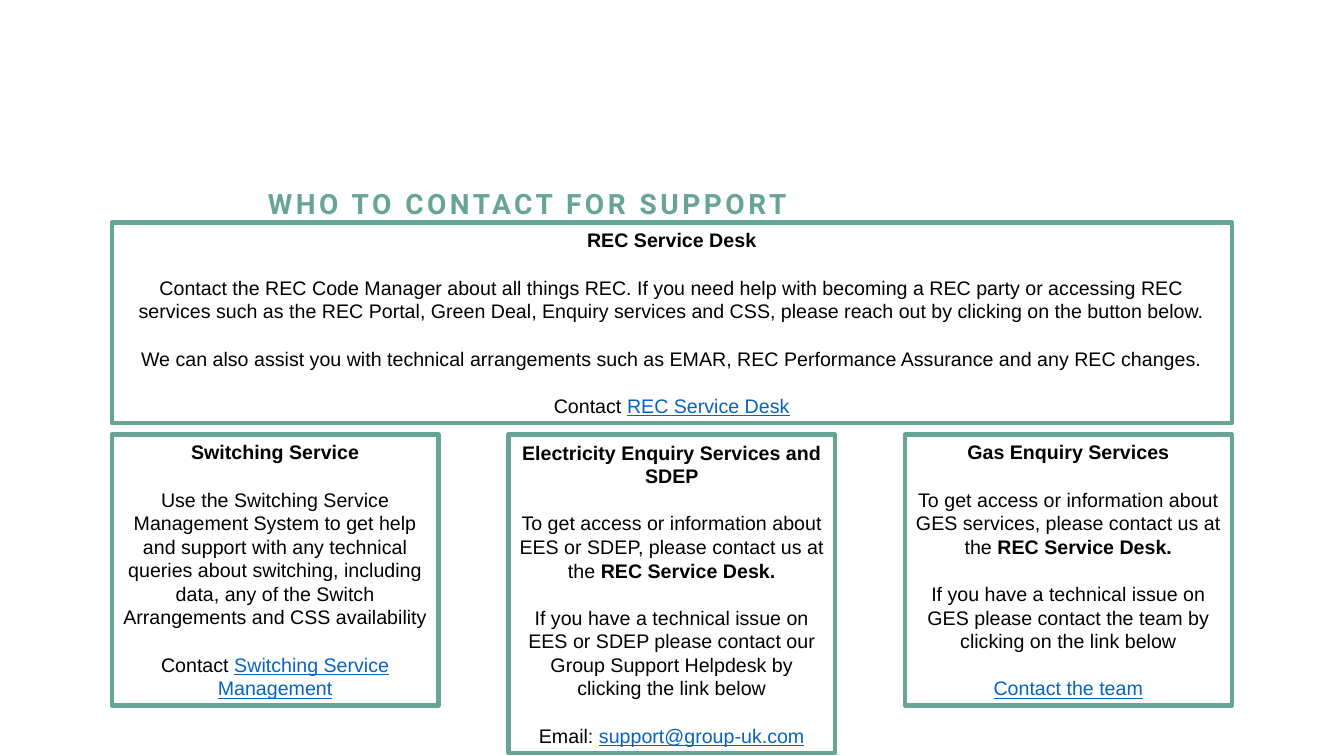
from pptx import Presentation
from pptx.dml.color import RGBColor
from pptx.enum.shapes import MSO_SHAPE
from pptx.enum.text import MSO_ANCHOR, MSO_AUTO_SIZE, PP_ALIGN
from pptx.util import Cm, Pt

GREEN = RGBColor(0x68, 0xA4, 0x95)
BLACK = RGBColor(0x00, 0x00, 0x00)
LINK_BLUE = RGBColor(0x05, 0x63, 0xC1)

PLAIN, BOLD, LINK = "plain", "bold", "link"

LEFT, FULL_WIDTH = 2.82, 28.22
CARD_TOP, CARD_WIDTH = 10.95, 8.23

SERVICE_DESK = [
    [("REC Service Desk", BOLD)],
    [("Contact the REC Code Manager about all things REC. If you need help with "
      "becoming a REC party or accessing REC services such as the REC Portal, Green "
      "Deal, Enquiry services and CSS, please reach out by clicking on the button "
      "below.", PLAIN)],
    [("We can also assist you with technical arrangements such as EMAR, REC "
      "Performance Assurance and any REC changes.", PLAIN)],
    [("Contact ", PLAIN), ("REC Service Desk", LINK)],
]

# Each card: height in cm, paragraphs
CARDS = [
    (6.83, [
        [("Switching Service", BOLD)],
        [("Use the Switching Service Management System to get help and support with "
          "any technical queries about switching, including data, any of the Switch "
          "Arrangements and CSS availability", PLAIN)],
        [("Contact ", PLAIN), ("Switching Service Management", LINK)],
    ]),
    (8.03, [
        [("Electricity Enquiry Services and SDEP", BOLD)],
        [("To get access or information about EES or SDEP, please contact us at the ",
          PLAIN), ("REC Service Desk.", BOLD)],
        [("If you have a technical issue on EES or SDEP please contact our Group "
          "Support Helpdesk by clicking the link below", PLAIN)],
        [("Email: ", PLAIN), ("support@group-uk.com", LINK)],
    ]),
    (6.83, [
        [("Gas Enquiry Services", BOLD)],
        [("To get access or information about GES services, please contact us at the ",
          PLAIN), ("REC Service Desk.", BOLD)],
        [("If you have a technical issue on GES please contact the team by clicking on "
          "the link below", PLAIN)],
        [("Contact the team", LINK)],
    ]),
]


class SupportSlide:
    def __init__(self, presentation):
        self.slide = presentation.slides.add_slide(presentation.slide_layouts[6])
        self.body_font, self.title_font = "Arial", "Roboto"
        self.body_size, self.title_size = Pt(14), Pt(20)
        self.paragraph_gap = Pt(17)

    def title(self, text, left, top, width, height):
        box = self.slide.shapes.add_textbox(Cm(left), Cm(top), Cm(width), Cm(height))
        frame = box.text_frame
        frame.word_wrap = True
        paragraph = frame.paragraphs[0]
        paragraph.line_spacing = 0.9
        run = paragraph.add_run()
        run.text = text
        run.font._element.set("spc", "250")
        font = run.font
        font.name, font.size, font.bold = self.title_font, self.title_size, True
        font.color.rgb = GREEN

    def card(self, paragraphs, left, top, width, height):
        """Outlined box of centred paragraphs, each a list of (text, style) runs."""
        shape = self.slide.shapes.add_shape(
            MSO_SHAPE.RECTANGLE, Cm(left), Cm(top), Cm(width), Cm(height))
        shape.shadow.inherit = False
        shape.fill.background()
        shape.line.color.rgb = GREEN
        shape.line.width = Pt(3)
        frame = shape.text_frame
        frame.word_wrap = True
        frame.auto_size = MSO_AUTO_SIZE.SHAPE_TO_FIT_TEXT
        frame.vertical_anchor = MSO_ANCHOR.MIDDLE
        for index, runs in enumerate(paragraphs):
            paragraph = frame.add_paragraph() if index else frame.paragraphs[0]
            if index:
                paragraph.space_before = self.paragraph_gap
            paragraph.alignment = PP_ALIGN.CENTER
            paragraph.font.name = self.body_font
            paragraph.font.size = self.body_size
            for text, style in runs:
                self.run(paragraph, text, style)

    def run(self, paragraph, text, style):
        run = paragraph.add_run()
        run.text = text
        run.font.name = self.body_font
        run.font.size = self.body_size
        run.font.bold = style == BOLD
        run.font.underline = style == LINK
        run.font.color.rgb = LINK_BLUE if style == LINK else BLACK


def main():
    presentation = Presentation()
    presentation.slide_width, presentation.slide_height = Cm(33.87), Cm(19.05)
    support = SupportSlide(presentation)
    support.title("WHO TO CONTACT FOR SUPPORT", 6.5, 4.67, 21.41, 1.88)
    step = (FULL_WIDTH - CARD_WIDTH) / (len(CARDS) - 1)
    for column, (height, paragraphs) in enumerate(CARDS):
        support.card(paragraphs, LEFT + column * step, CARD_TOP, CARD_WIDTH, height)
    support.card(SERVICE_DESK, LEFT, 5.61, FULL_WIDTH, 5.05)
    presentation.save("out.pptx")


if __name__ == "__main__":
    main()
